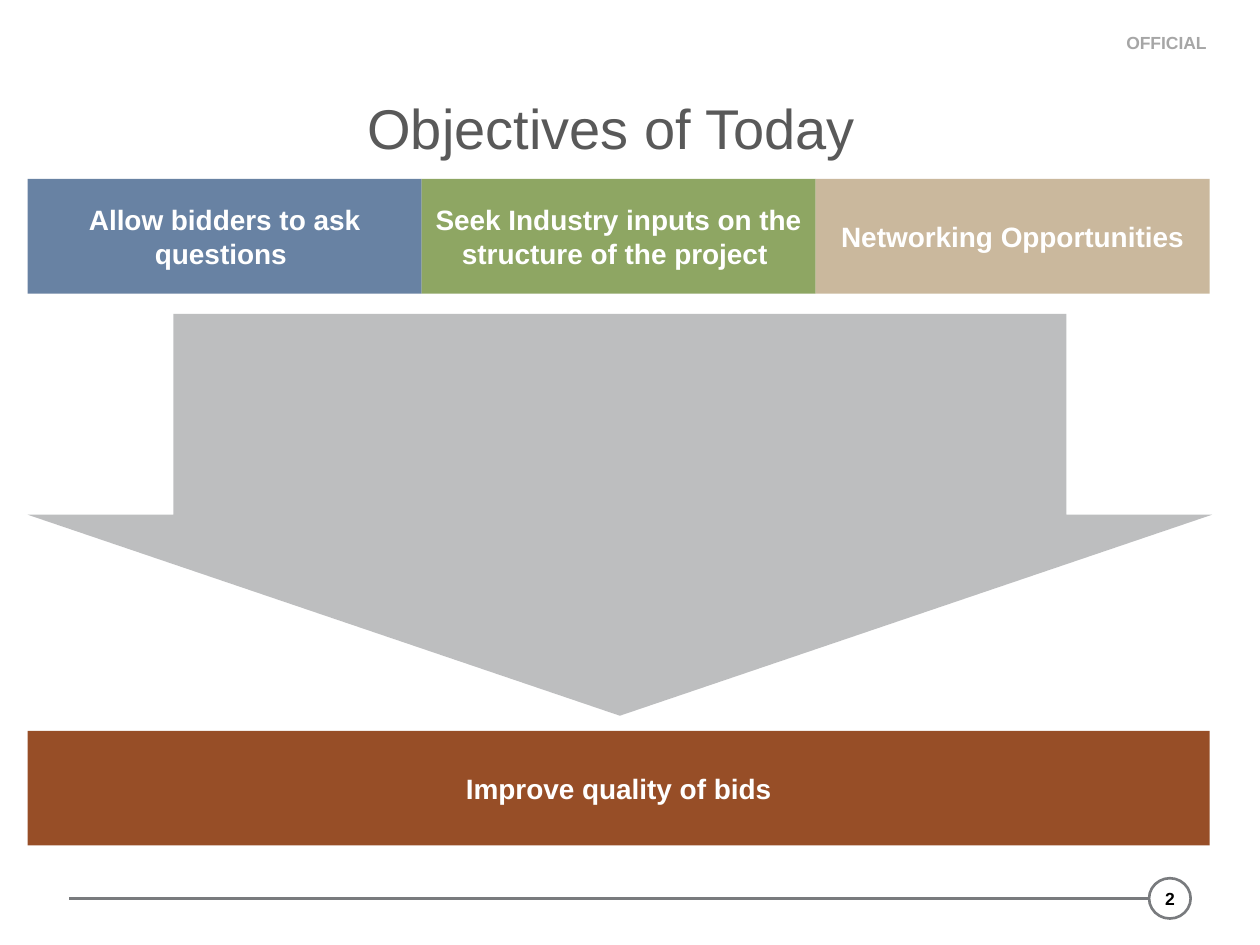
from lxml.etree import SubElement
from pptx import Presentation
from pptx.dml.color import RGBColor
from pptx.enum.shapes import MSO_CONNECTOR as Connector, MSO_SHAPE as Shape
from pptx.enum.text import MSO_ANCHOR as Anchor, PP_ALIGN as Align
from pptx.oxml.ns import qn
from pptx.util import Inches, Pt

GRAY = "797B7E"
WHITE = "FFFFFF"
LEFT = 0.22
BANNER_WIDTH = 9.38
BANNER_HEIGHT = 0.91
OBJECTIVES = [
    ("Allow bidders to ask questions ", "506E94"),
    ("Seek Industry inputs on the structure of the project ", "7C984A"),
    ("Networking Opportunities", "C2AD8D"),
]


def color(hex_code):
    return RGBColor.from_string(hex_code)


def write(shape, text, size, hex_code, bold=False, align=Align.CENTER, wrap=True):
    frame = shape.text_frame
    frame.text = text
    frame.word_wrap = wrap
    frame.vertical_anchor = Anchor.MIDDLE
    para = frame.paragraphs[0]
    para.alignment = align
    font = para.runs[0].font
    font.name = "Arial"
    font.size = Pt(size)
    font.bold = bold
    font.color.rgb = color(hex_code)
    return para


def add_label(page, box, text, size, hex_code, **style):
    label = page.shapes.add_textbox(*map(Inches, box))
    return label, write(label, text, size, hex_code, **style)


def add_block(page, kind, box, hex_code, opacity):
    block = page.shapes.add_shape(kind, *map(Inches, box))
    block.shadow.inherit = False
    block.line.fill.background()
    block.fill.solid()
    block.fill.fore_color.rgb = color(hex_code)
    fill_color = block._element.spPr.find(qn("a:solidFill")).find(qn("a:srgbClr"))
    SubElement(fill_color, qn("a:alpha"), val=str(opacity * 1000))
    return block


def add_banner(page, box, text, hex_code):
    banner = add_block(page, Shape.RECTANGLE, box, hex_code, 86)
    write(banner, text, 16, WHITE, bold=True)


def add_header(page):
    add_label(page, (8.84, 0.2, 0.85, 0.27), "OFFICIAL", 10, "A6A6A6",
              bold=True, align=Align.LEFT, wrap=False)
    title, para = add_label(page, (0.2, 0.65, 9.43, 0.78),
                            "Objectives of Today ", 32, "595959")
    para.line_spacing = 0.9


def add_objectives(page, left, top, width, height):
    step = width / len(OBJECTIVES)
    for index, (text, hex_code) in enumerate(OBJECTIVES):
        add_banner(page, (left + index * step, top, step, height), text, hex_code)


def add_arrow(page, box):
    arrow = add_block(page, Shape.DOWN_ARROW, box, GRAY, 49)
    arrow.adjustments[0] = 0.754
    arrow.adjustments[1] = 0.5


def add_footer(page):
    rule = page.shapes.add_connector(
        Connector.STRAIGHT, Inches(9.12), Inches(7.13), Inches(0.55), Inches(7.13))
    SubElement(rule._element.spPr, qn("a:effectLst"))
    ring = page.shapes.add_shape(
        Shape.OVAL, Inches(9.12), Inches(6.97), Inches(0.33), Inches(0.32))
    ring.shadow.inherit = False
    ring.fill.background()
    for outline in (rule.line, ring.line):
        outline.color.rgb = color(GRAY)
        outline.width = Pt(1.5)
    number, para = add_label(page, (9.1, 7.02, 0.37, 0.22), "2", 10, "000000", bold=True)
    number.text_frame.margin_left = number.text_frame.margin_right = Inches(0.04)


def main():
    deck = Presentation()
    deck.slide_width = Inches(10)
    deck.slide_height = Inches(7.5)
    page = deck.slides.add_slide(deck.slide_layouts[6])
    add_footer(page)
    add_arrow(page, (LEFT, 2.49, 9.4, 3.19))
    add_header(page)
    add_objectives(page, LEFT, 1.42, BANNER_WIDTH, BANNER_HEIGHT)
    add_banner(page, (LEFT, 5.8, BANNER_WIDTH, BANNER_HEIGHT),
               "Improve quality of bids", "863204")
    deck.save("out.pptx")


if __name__ == "__main__":
    main()
